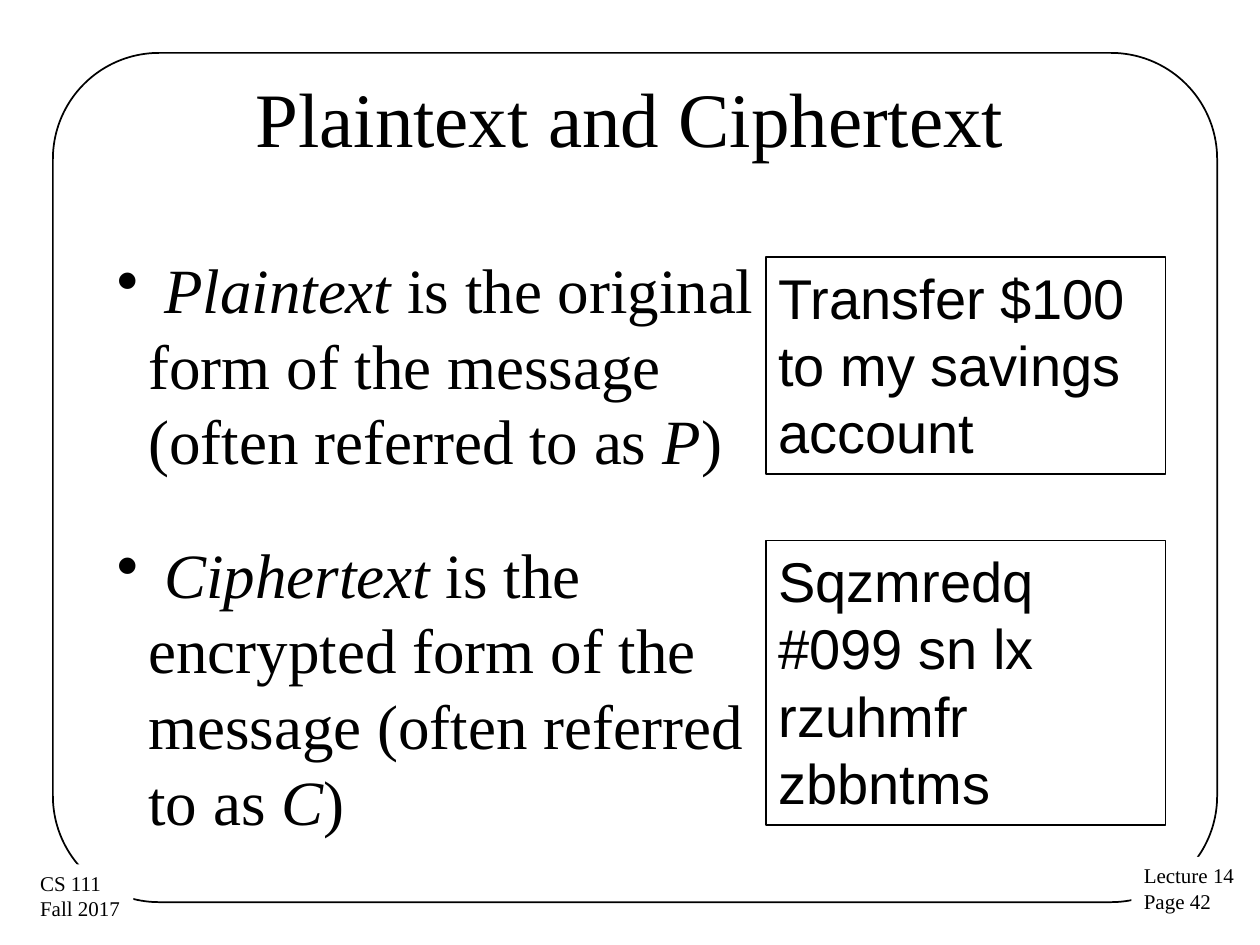
from lxml import etree
from pptx import Presentation
from pptx.dml.color import RGBColor
from pptx.enum.shapes import MSO_SHAPE
from pptx.enum.text import MSO_ANCHOR, PP_ALIGN
from pptx.oxml.ns import qn
from pptx.util import Pt

BLACK = RGBColor(0, 0, 0)
WHITE = RGBColor(255, 255, 255)
RECTANGLE = MSO_SHAPE.RECTANGLE
ROUNDED = MSO_SHAPE.ROUNDED_RECTANGLE
TOP, MIDDLE = MSO_ANCHOR.TOP, MSO_ANCHOR.MIDDLE
LEFT, CENTER = PP_ALIGN.LEFT, PP_ALIGN.CENTER
SERIF, SANS = "Times New Roman", "Arial"

TITLE = "Plaintext and Ciphertext"
FRAME = (30.24, 30.24, 665.28, 485.28)
FOOTERS = [
    (["Lecture 14", "Page 42"], (646.56, 489.6, 66.96, 36.72)),
    (["CS 111", "Fall 2017"], (15.84, 493.92, 60.48, 36.72)),
]
TERMS = [
    {
        "definition": [
            (" Plaintext", True),
            (" is the original form of the message (often referred to as ", False),
            ("P", True),
            (")", False),
        ],
        "example": "Transfer $100 to my savings account",
        "top": 139.68, "height": 136.8,
        "example_top": 146.88, "example_height": 123.84,
    },
    {
        "definition": [
            (" Ciphertext", True),
            (" is the encrypted form of the message (often referred to as ", False),
            ("C", True),
            (")", False),
        ],
        "example": "Sqzmredq #099 sn lx rzuhmfr zbbntms",
        "top": 302.4, "height": 180,
        "example_top": 308.88, "example_height": 162.72,
    },
]
DEFINITION_LEFT, DEFINITION_WIDTH = 59.76, 390.24
EXAMPLE_LEFT, EXAMPLE_WIDTH = 437.76, 228.24
BULLET_INDENT = 18


def add_panel(page, kind, area, fill=None, outlined=True):
    panel = page.shapes.add_shape(kind, *map(Pt, area))
    panel.shadow.inherit = False
    if fill is None:
        panel.fill.background()
    else:
        panel.fill.solid()
        panel.fill.fore_color.rgb = fill
    if outlined:
        panel.line.color.rgb = BLACK
        panel.line.width = Pt(1)
    else:
        panel.line.fill.background()
    return panel


def write(box, paragraphs, font, size, align=LEFT, anchor=TOP, wrap=True):
    frame = box.text_frame
    frame.word_wrap = wrap
    frame.vertical_anchor = anchor
    for index, spans in enumerate(paragraphs):
        para = frame.add_paragraph() if index else frame.paragraphs[0]
        para.alignment = align
        para.font.name = font
        para.font.size = Pt(size)
        para.font.color.rgb = BLACK
        for text, italic in spans:
            span = para.add_run()
            span.text = text
            if italic:
                span.font.italic = True


def add_bullet(para):
    properties = para._p.get_or_add_pPr()
    properties.set("marL", str(Pt(BULLET_INDENT)))
    properties.set("indent", str(-Pt(BULLET_INDENT)))
    bullet = etree.Element(qn("a:buChar"), char="•")
    properties.find(qn("a:defRPr")).addprevious(bullet)


deck = Presentation()
deck.slide_width, deck.slide_height = Pt(720), Pt(540)
page = deck.slides.add_slide(deck.slide_layouts[6])

border = add_panel(page, ROUNDED, FRAME)
border.adjustments[0] = 0.125

for lines, area in FOOTERS:
    footer = add_panel(page, RECTANGLE, area, WHITE, outlined=False)
    write(footer, [[(line, False)] for line in lines], SERIF, 12, wrap=False)

heading = page.shapes.add_textbox(Pt(36), Pt(21.6), Pt(648), Pt(90))
write(heading, [[(TITLE, False)]], SERIF, 44, CENTER, MIDDLE)

for term in TERMS:
    definition = page.shapes.add_textbox(
        Pt(DEFINITION_LEFT), Pt(term["top"]), Pt(DEFINITION_WIDTH), Pt(term["height"]))
    write(definition, [term["definition"]], SERIF, 36)
    add_bullet(definition.text_frame.paragraphs[0])
    example = add_panel(page, RECTANGLE, (
        EXAMPLE_LEFT, term["example_top"], EXAMPLE_WIDTH, term["example_height"]))
    write(example, [[(term["example"], False)]], SANS, 32)

deck.save("out.pptx")
